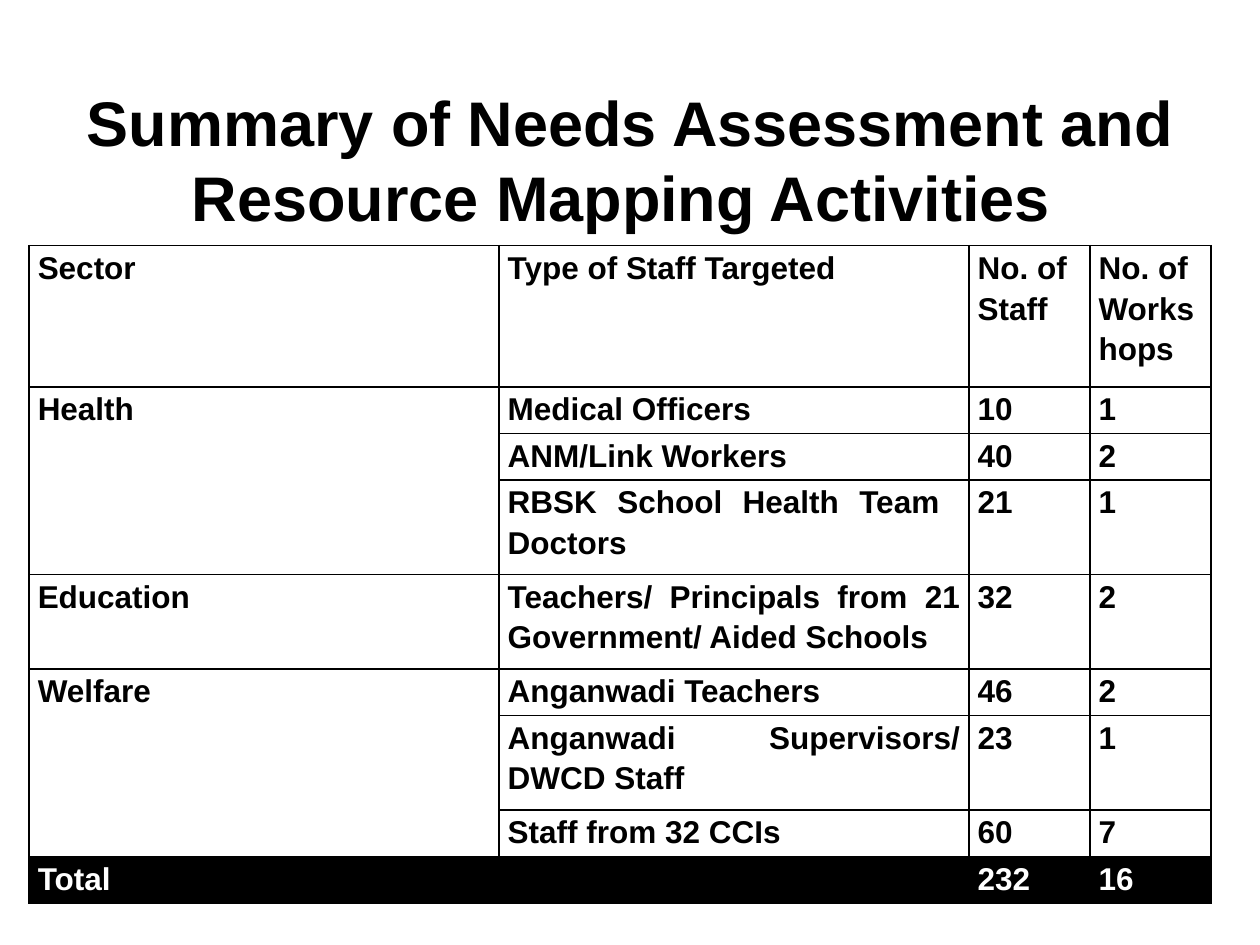
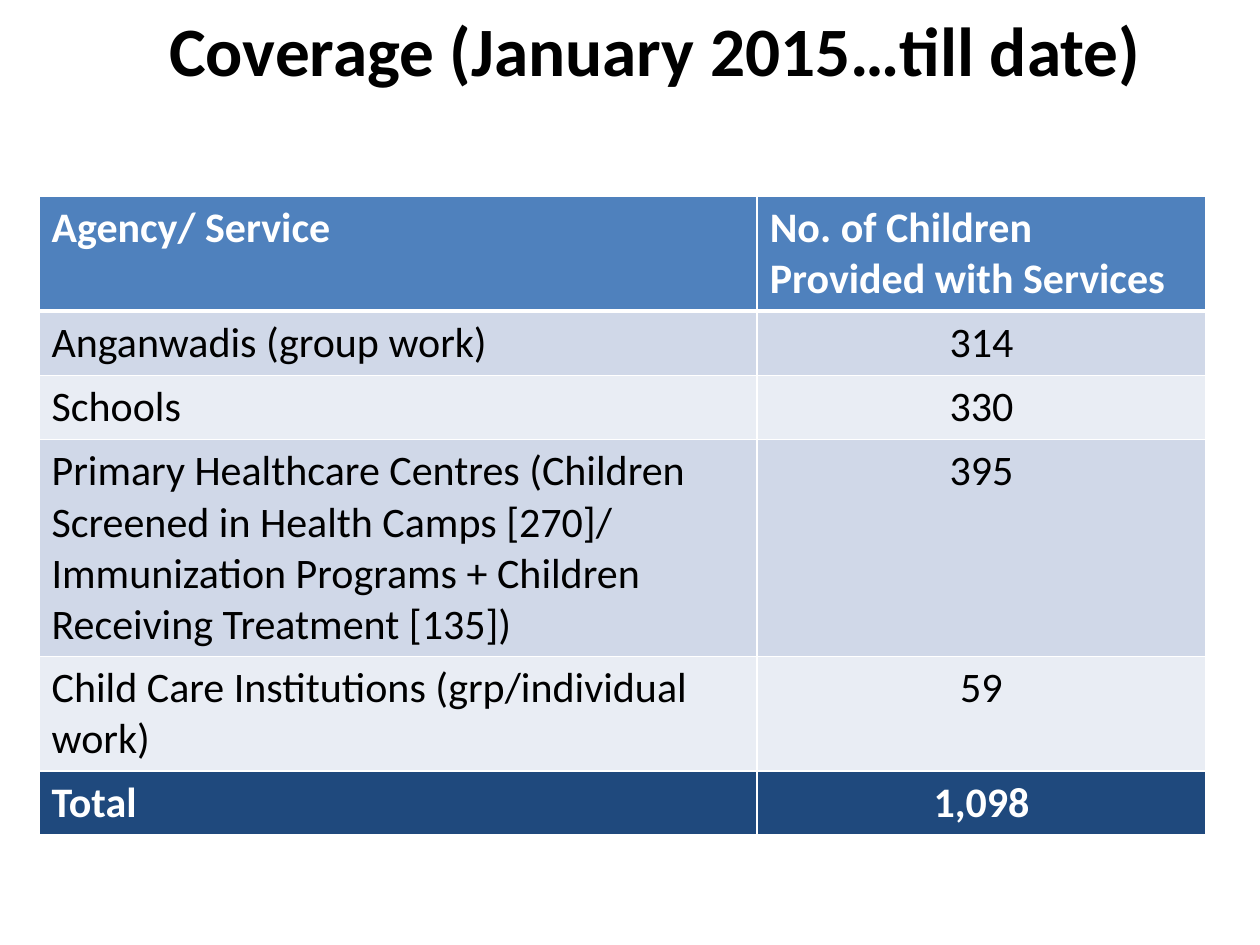
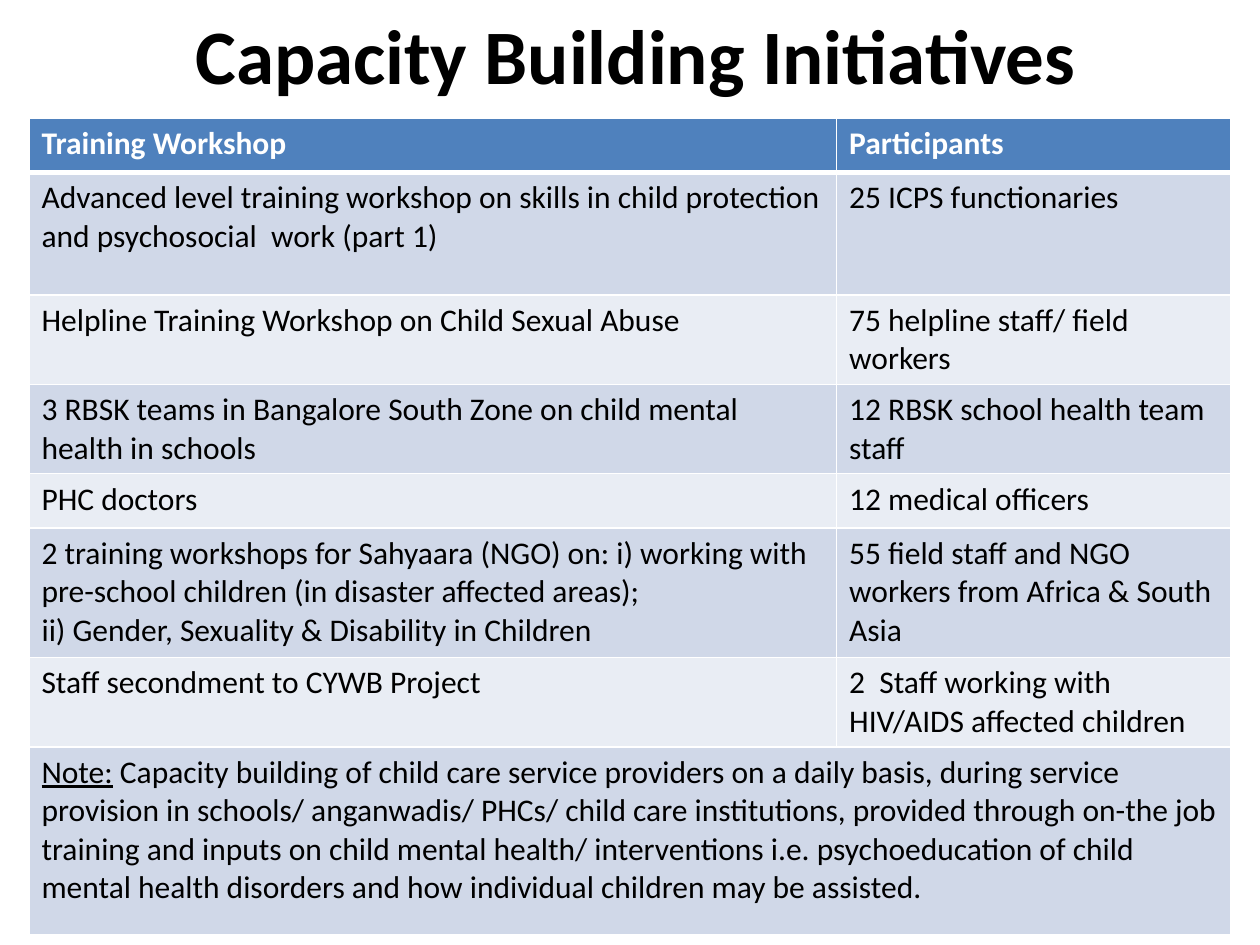
from pptx import Presentation
from pptx.dml.color import RGBColor
from pptx.enum import text
from pptx.oxml import parse_xml
from pptx.oxml.ns import nsdecls
from pptx.util import Inches, Pt

BLACK, WHITE = "000000", "FFFFFF"
HEADER, TOTAL = "4F81BD", "1F497D"
BANDS = ("D0D8E8", "E9EDF4")
LEFT, CENTER, JUSTIFY = (text.PP_ALIGN.LEFT, text.PP_ALIGN.CENTER,
                         text.PP_ALIGN.JUSTIFY)


def rgb(value):
    return RGBColor.from_string(value)


def write(tf, content, color, align=LEFT, spacing=1.0, **font):
    """Write one paragraph per line; in a tuple the first run is underlined."""
    runs = content if isinstance(content, tuple) else None
    lines = [runs] if runs else [(line,) for line in content.split("\n")]
    for i, line in enumerate(lines):
        p = tf.add_paragraph() if i else tf.paragraphs[0]
        p.alignment = align
        p.line_spacing = spacing
        for j, part in enumerate(line):
            r = p.add_run()
            r.text = part
            r.font.color.rgb = rgb(color)
            r.font.underline = bool(runs) and j == 0
            for name, value in font.items():
                setattr(r.font, name, value)


def add_title(s, box, content, name, size, top_inset=None):
    """Add a bold centred title, in the middle or a set distance from the top."""
    tf = s.shapes.add_textbox(*map(Inches, box)).text_frame
    tf.word_wrap = True
    tf.vertical_anchor = text.MSO_ANCHOR.MIDDLE
    if top_inset is not None:
        tf.vertical_anchor = text.MSO_ANCHOR.TOP
        tf.margin_top = Inches(top_inset)
    write(tf, content, BLACK, CENTER, name=name, size=Pt(size), bold=True)


def set_borders(cell, color, bottom=1):
    tc_pr = cell._tc.get_or_add_tcPr()
    widths = {"lnL": 1, "lnR": 1, "lnT": 1, "lnB": bottom}
    for i, (tag, width) in enumerate(widths.items()):
        tc_pr.insert(i, parse_xml(
            f'<a:{tag} {nsdecls("a")} w="{Pt(width)}"><a:solidFill>'
            f'<a:srgbClr val="{color}"/></a:solidFill></a:{tag}>'))


def add_table(s, left, top, widths, heights, rows, merges, style):
    """Add a table; style(r, c) gives a cell's fill, border, margins and text."""
    frame = s.shapes.add_table(
        len(rows), len(widths), Inches(left), Inches(top),
        Inches(sum(widths)), Inches(sum(heights)))
    table = frame.table
    table.first_row = table.horz_banding = False
    for col, width in zip(table.columns, widths):
        col.width = Inches(width)
    for row, height in zip(table.rows, heights):
        row.height = Inches(height)
    for first, last in merges:
        table.cell(*first).merge(table.cell(*last))
    for r, row in enumerate(rows):
        for c, content in enumerate(row):
            cell = table.cell(r, c)
            look = style(r, c)
            if look["fill"]:
                cell.fill.solid()
                cell.fill.fore_color.rgb = rgb(look["fill"])
            else:
                cell.fill.background()
            set_borders(cell, *look["border"])
            for name, value in look["margins"].items():
                setattr(cell, name, Inches(value))
            if content:
                write(cell.text_frame, content, **look["text"])


def plain_style(last):
    """Black grid on white, with a black total row at the end."""
    margins = {"margin_left": 0.07, "margin_right": 0.07,
               "margin_top": 0, "margin_bottom": 0}

    def style(r, c):
        total = r == last
        return {"fill": BLACK if total else None, "border": (BLACK,),
                "margins": margins,
                "text": {"color": WHITE if total else BLACK,
                         "align": JUSTIFY if r else LEFT, "spacing": 1.15,
                         "name": "Arial", "size": Pt(18), "bold": True}}
    return style


def banded_style(size, total_row=None, number_col=None):
    """Blue header, light bands and, if asked, a dark total row."""
    def style(r, c):
        strong = r in (0, total_row)
        fill = HEADER if r == 0 else TOTAL if strong else BANDS[(r - 1) % 2]
        return {"fill": fill, "border": (WHITE, 1 if r else 3), "margins": {},
                "text": {"color": WHITE if strong else BLACK,
                         "align": CENTER if r and c == number_col else LEFT,
                         "name": "Calibri", "size": Pt(size), "bold": strong}}
    return style


NEEDS = [
    ("Sector", "Type of Staff Targeted", "No. of Staff", "No. of Workshops"),
    ("Health", "Medical Officers", "10", "1"),
    (None, "ANM/Link Workers", "40", "2"),
    (None, "RBSK School Health Team  Doctors", "21", "1"),
    ("Education", "Teachers/ Principals from 21 Government/ Aided Schools",
     "32", "2"),
    ("Welfare", "Anganwadi Teachers", "46", "2"),
    (None, "Anganwadi Supervisors/ DWCD Staff", "23", "1"),
    (None, "Staff from 32 CCIs", "60", "7"),
    ("Total", None, "232", "16"),
]

COVERAGE = [
    ("Agency/ Service", "No. of Children Provided with Services"),
    ("Anganwadis (group work)", "314"),
    ("Schools", "330"),
    ("Primary Healthcare Centres (Children Screened in Health Camps [270]/ "
     "Immunization Programs + Children Receiving Treatment [135])", "395"),
    ("Child Care Institutions (grp/individual work)", "59"),
    ("Total", "1,098"),
]

TRAINING = [
    ("Training Workshop", "Participants"),
    ("Advanced level training workshop on skills in child protection and "
     "psychosocial  work (part 1)", "25 ICPS functionaries"),
    ("Helpline Training Workshop on Child Sexual Abuse",
     "75 helpline staff/ field workers"),
    ("3 RBSK teams in Bangalore South Zone on child mental health in schools",
     "12 RBSK school health team staff"),
    ("PHC doctors", "12 medical officers"),
    ("2 training workshops for Sahyaara (NGO) on: i) working with pre-school "
     "children (in disaster affected areas);\n"
     "ii) Gender, Sexuality & Disability in Children",
     "55 field staff and NGO workers from Africa & South Asia"),
    ("Staff secondment to CYWB Project",
     "2  Staff working with HIV/AIDS affected children"),
    (("Note:", " Capacity building of child care service providers on a daily "
      "basis, during service provision in schools/ anganwadis/ PHCs/ child "
      "care institutions, provided through on-the job training and inputs on "
      "child mental health/ interventions i.e. psychoeducation of child "
      "mental health disorders and how individual children may be assisted."),
     None),
]


def main():
    prs = Presentation()
    prs.slide_width, prs.slide_height = Inches(10), Inches(7.5)
    needs, coverage, training = (
        prs.slides.add_slide(prs.slide_layouts[6]) for _ in range(3))

    add_title(needs, (0.5, 0.3, 9, 1.25),
              "Summary of Needs Assessment and Resource Mapping Activities ",
              "Arial", 36, top_inset=0.36)
    add_table(needs, 0.23, 1.95, (3.73, 3.73, 0.96, 0.96),
              (1.12, 0.37, 0.37, 0.75, 0.75, 0.37, 0.75, 0.37, 0.37), NEEDS,
              [((1, 0), (3, 0)), ((5, 0), (7, 0)), ((8, 0), (8, 1))],
              plain_style(last=8))

    add_title(coverage, (0.7, 0, 9, 0.78), "Coverage (January 2015…till date)",
              "Calibri", 39.6)
    add_table(coverage, 0.31, 1.56, (5.7, 3.56),
              (0.91, 0.51, 0.51, 1.72, 0.91, 0.51), COVERAGE, [],
              banded_style(24, total_row=5, number_col=1))

    add_title(training, (0.55, 0, 9, 0.86), "Capacity Building Initiatives",
              "Calibri", 44)
    add_table(training, 0.23, 0.94, (6.41, 3.13),
              (0.43, 0.97, 0.71, 0.71, 0.43, 1.03, 0.71, 1.49), TRAINING,
              [((7, 0), (7, 1))], banded_style(18))

    prs.save("out.pptx")


if __name__ == "__main__":
    main()
